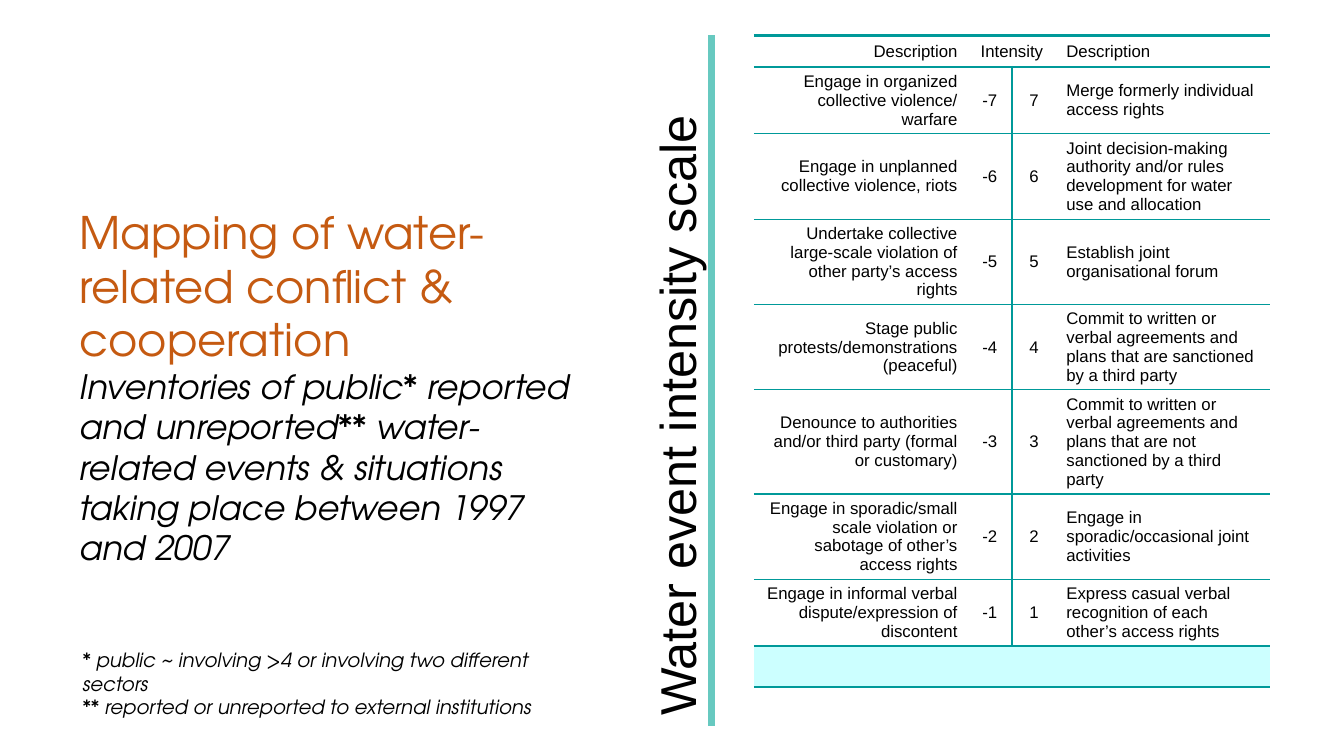
import pptx
import pptx.util
import pptx.dml.color
import pptx.enum.shapes
import pptx.enum.text
import pptx.oxml.ns
import lxml.etree

COLUMNS, ROWS = 160, 90
WIDTH = pptx.util.Inches(13.333)
ALIGN = pptx.enum.text.PP_ALIGN
ANCHOR = pptx.enum.text.MSO_ANCHOR
TEAL = "009999"
BODY = {"size": 12, "font": "Arial", "color": "000000"}
TITLE = {"size": 32, "font": "TeX Gyre Adventor", "color": "C55A11"}
SUBTITLE = {**TITLE, "size": 24, "color": "000000", "italic": True}
FOOTNOTE = {**SUBTITLE, "size": 14}
SCALE = {**BODY, "size": 36}

LEVELS = [
    (7, 3, "Engage in organized collective violence/ warfare",
     "Merge formerly individual access rights"),
    (6, 4, "Engage in unplanned collective violence, riots",
     "Joint decision-making authority and/or rules development for water use and allocation"),
    (5, 4, "Undertake collective large-scale violation of other party’s access rights",
     "Establish joint organisational forum"),
    (4, 4, "Stage public protests/demonstrations (peaceful)",
     "Commit to written or verbal agreements and plans that are sanctioned by a third party"),
    (3, 5, "Denounce to authorities and/or third party (formal or customary)",
     "Commit to written or verbal agreements and plans that are not sanctioned by a third party"),
    (2, 4, "Engage in sporadic/small scale violation or sabotage of other’s access rights",
     "Engage in sporadic/occasional joint activities"),
    (1, 3, "Engage in informal verbal dispute/expression of discontent",
     "Express casual verbal recognition of each other’s access rights"),
]


def grid(cells):
    return round(WIDTH * cells / COLUMNS)


def paint(color_format, value):
    color_format.rgb = pptx.dml.color.RGBColor.from_string(value)


def write(paragraph, text, style, align=ALIGN.LEFT):
    paragraph.alignment = align
    run = paragraph.add_run()
    run.text = text
    values = {"name": style["font"], "size": pptx.util.Pt(style["size"]),
              "bold": False, "italic": style.get("italic", False)}
    for attribute, value in values.items():
        setattr(run.font, attribute, value)
    paint(run.font.color, style["color"])


def text_region(slide, box, lines, anchor=ANCHOR.TOP, rotation=0):
    region = slide.shapes.add_textbox(*map(grid, box))
    region.rotation = rotation
    frame = region.text_frame
    frame.word_wrap = True
    frame.vertical_anchor = anchor
    for index, (text, style) in enumerate(lines):
        paragraph = frame.add_paragraph() if index else frame.paragraphs[0]
        write(paragraph, text, style)


def scale_region(slide, box):
    left, top, width, height = box
    length = height - 6.96
    text_region(slide, (left + (width - length) / 2 - 4.2, top + height - length / 2 - 4.2,
                        length, 8.4),
                [("Water event intensity scale", SCALE)], ANCHOR.BOTTOM, 270)
    axis = slide.shapes.add_connector(
        pptx.enum.shapes.MSO_CONNECTOR.STRAIGHT,
        grid(left + width / 2), grid(top), grid(left + width / 2), grid(top + height))
    paint(axis.line.color, "67C9C0")
    axis.line.width = pptx.util.Pt(4.5)
    lxml.etree.SubElement(axis.element.spPr, pptx.oxml.ns.qn("a:effectLst"))


def set_borders(cell, widths):
    properties = cell._tc.get_or_add_tcPr()
    for index, side in enumerate("LRTB"):
        points = widths.get(side, 0)
        line = lxml.etree.Element(pptx.oxml.ns.qn(f"a:ln{side}"), w=str(pptx.util.Pt(points)))
        if points:
            fill = lxml.etree.SubElement(line, pptx.oxml.ns.qn("a:solidFill"))
            lxml.etree.SubElement(fill, pptx.oxml.ns.qn("a:srgbClr"), val=TEAL)
        else:
            lxml.etree.SubElement(line, pptx.oxml.ns.qn("a:noFill"))
        properties.insert(index, line)


def intensity_table(slide, box):
    heights = [3.8] + [1.2 + 2.24 * lines for _, lines, _, _ in LEVELS] + [4.6]
    last = len(heights) - 1
    table = slide.shapes.add_table(len(heights), 4, *map(grid, box)).table
    for flag in ("first_row", "horz_banding"):
        setattr(table, flag, False)
    description = (box[2] - 2 * 5.28) / 2
    for column, width in zip(table.columns, (description, 5.28, 5.28, description)):
        column.width = grid(width)
    for row, height in zip(table.rows, heights):
        row.height = grid(height)
    for row in (0, last):
        table.cell(row, 1).merge(table.cell(row, 2))

    contents = [("Description", "Intensity", "", "Description")]
    contents += [(conflict, f"-{level}", str(level), cooperation)
                 for level, _, conflict, cooperation in LEVELS]
    contents.append(("",) * 4)
    aligns = (ALIGN.RIGHT, ALIGN.CENTER, ALIGN.CENTER, ALIGN.LEFT)
    for row, texts in enumerate(contents):
        borders = {"T": 2 if row in (0, 1, last) else 1,
                   "B": 2 if row in (0, last - 1, last) else 1}
        for column, (text, align) in enumerate(zip(texts, aligns)):
            cell = table.cell(row, column)
            cell.vertical_anchor = ANCHOR.MIDDLE
            if row == last:
                cell.fill.solid()
                paint(cell.fill.fore_color, "CCFFFF")
            else:
                cell.fill.background()
            middle = {1: {"R": 2}, 2: {"L": 2}}.get(column, {}) if 0 < row < last else {}
            set_borders(cell, {**borders, **middle})
            if text:
                write(cell.text_frame.paragraphs[0], text, BODY, align)


def main():
    deck = pptx.Presentation()
    deck.slide_width = WIDTH
    deck.slide_height = grid(ROWS)
    slide = deck.slides.add_slide(deck.slide_layouts[6])
    intensity_table(slide, (89.76, 4.2, 61.44, 77.4))
    scale_region(slide, (76.32, 4.2, 16.8, 82.2))
    text_region(slide, (8.28, 23.76, 62.64, 44.88), [
        ("Mapping of water-related conflict & cooperation", TITLE),
        ("Inventories of public* reported and unreported** water-related events & situations "
         "taking place between 1997 and 2007", SUBTITLE)])
    text_region(slide, (8.64, 76.56, 56.64, 9.72), [
        ("* public ~ involving >4 or involving two different sectors", FOOTNOTE),
        ("** reported or unreported to external institutions", FOOTNOTE)])
    deck.save("out.pptx")


if __name__ == "__main__":
    main()
